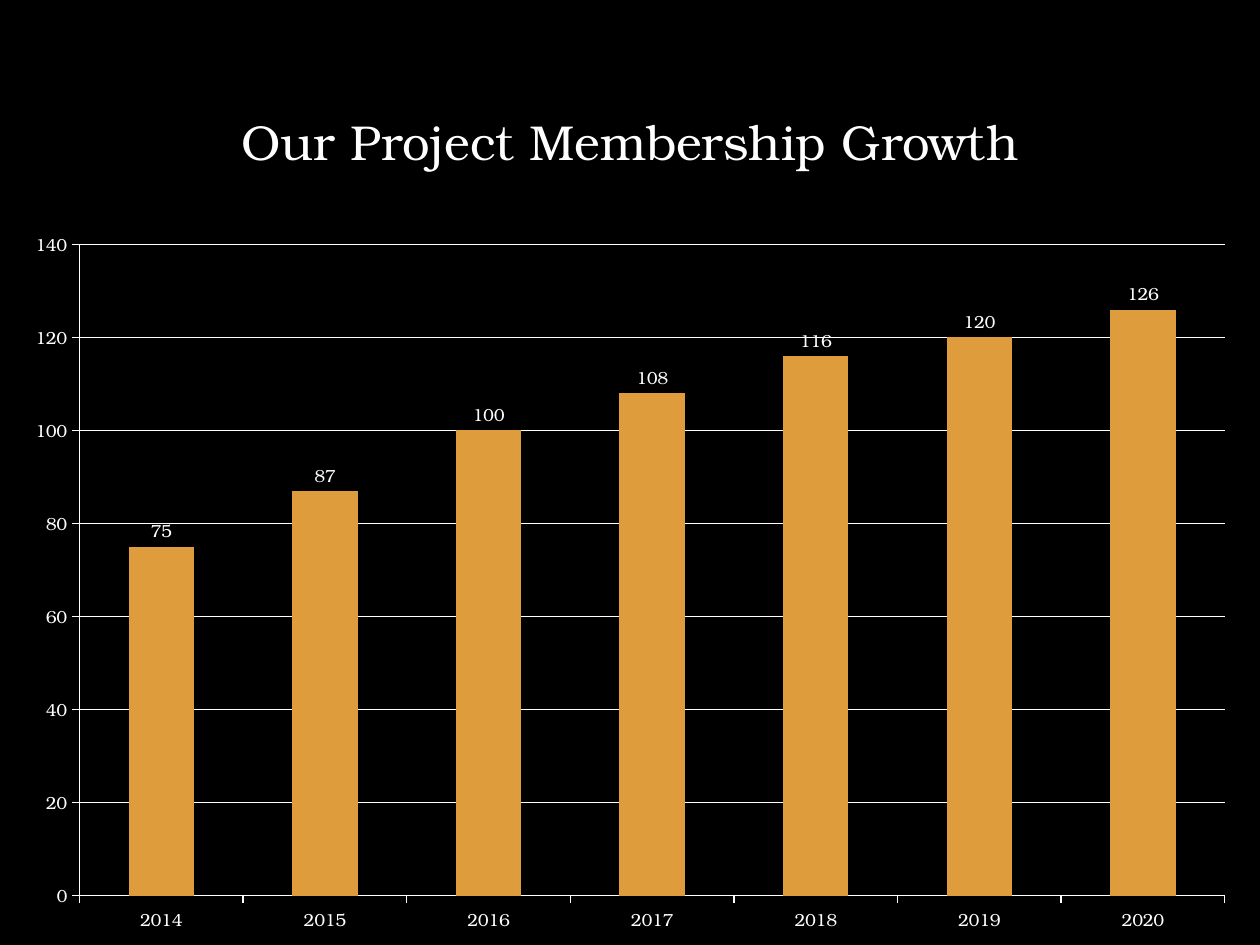
from pptx import Presentation
from pptx.chart.data import CategoryChartData
from pptx.dml.color import RGBColor
from pptx.enum import chart as ch, text
from pptx.util import Pt

COLORS = {"background": "000000", "text": "FFFFFF", "bar": "DE9C3C"}
FONT = "TeX Gyre Bonum"
MEMBERS = {"2014": 75, "2015": 87, "2016": 100, "2017": 108,
           "2018": 116, "2019": 120, "2020": 126}


def rgb(name):
    return RGBColor.from_string(COLORS[name])


class Deck:
    """Holds the presentation style and the current slide."""

    def __init__(self, width, height):
        self.prs = Presentation()
        self.prs.slide_width, self.prs.slide_height = Pt(width), Pt(height)
        self.s = None

    def add_slide(self):
        self.s = self.prs.slides.add_slide(self.prs.slide_layouts[5])
        fill = self.s.background.fill
        fill.solid()
        fill.fore_color.rgb = rgb("background")

    def style_font(self, font, size):
        font.name, font.size = FONT, Pt(size)
        font.bold = False
        font.color.rgb = rgb("text")

    def title(self, words, left, top, width, height, size=28):
        sp = self.s.shapes.title
        sp.left, sp.top, sp.width, sp.height = map(Pt, (left, top, width, height))
        tf = sp.text_frame
        tf.text = words
        tf.word_wrap = True
        tf.auto_size = text.MSO_AUTO_SIZE.NONE
        tf.vertical_anchor = text.MSO_ANCHOR.MIDDLE
        p = tf.paragraphs[0]
        p.alignment = text.PP_ALIGN.CENTER
        self.style_font(p.runs[0].font, size)

    def style_line(self, line):
        line.color.rgb = rgb("text")
        line.width = Pt(0.75)

    def column_chart(self, name, values, left, top, width, height, size=10):
        data = CategoryChartData()
        data.categories = list(values)
        data.add_series(name, list(values.values()))
        chart = self.s.shapes.add_chart(
            ch.XL_CHART_TYPE.COLUMN_CLUSTERED,
            *map(Pt, (left, top, width, height)), data).chart
        chart.has_title = chart.has_legend = False
        self.style_font(chart.font, size)

        for axis in (chart.category_axis, chart.value_axis):
            axis.major_tick_mark = ch.XL_TICK_MARK.OUTSIDE
            axis.minor_tick_mark = ch.XL_TICK_MARK.NONE
            self.style_line(axis.format.line)
        axis = chart.value_axis
        axis.minimum_scale, axis.maximum_scale, axis.major_unit = 0, 140, 20
        axis.has_major_gridlines = True
        self.style_line(axis.major_gridlines.format.line)

        plot = chart.plots[0]
        plot.gap_width = 150
        plot.vary_by_categories = False
        series = plot.series[0]
        series.format.fill.solid()
        series.format.fill.fore_color.rgb = rgb("bar")
        labels = series.data_labels
        labels.show_value = True
        labels.position = ch.XL_LABEL_POSITION.OUTSIDE_END
        self.style_font(labels.font, size)


def main():
    deck = Deck(720, 540)
    deck.add_slide()
    deck.title("Our Project Membership Growth", 0, 60, 720, 41)
    deck.column_chart("Series 1", MEMBERS, 6, 125, 708, 415)
    deck.prs.save("out.pptx")


if __name__ == "__main__":
    main()
